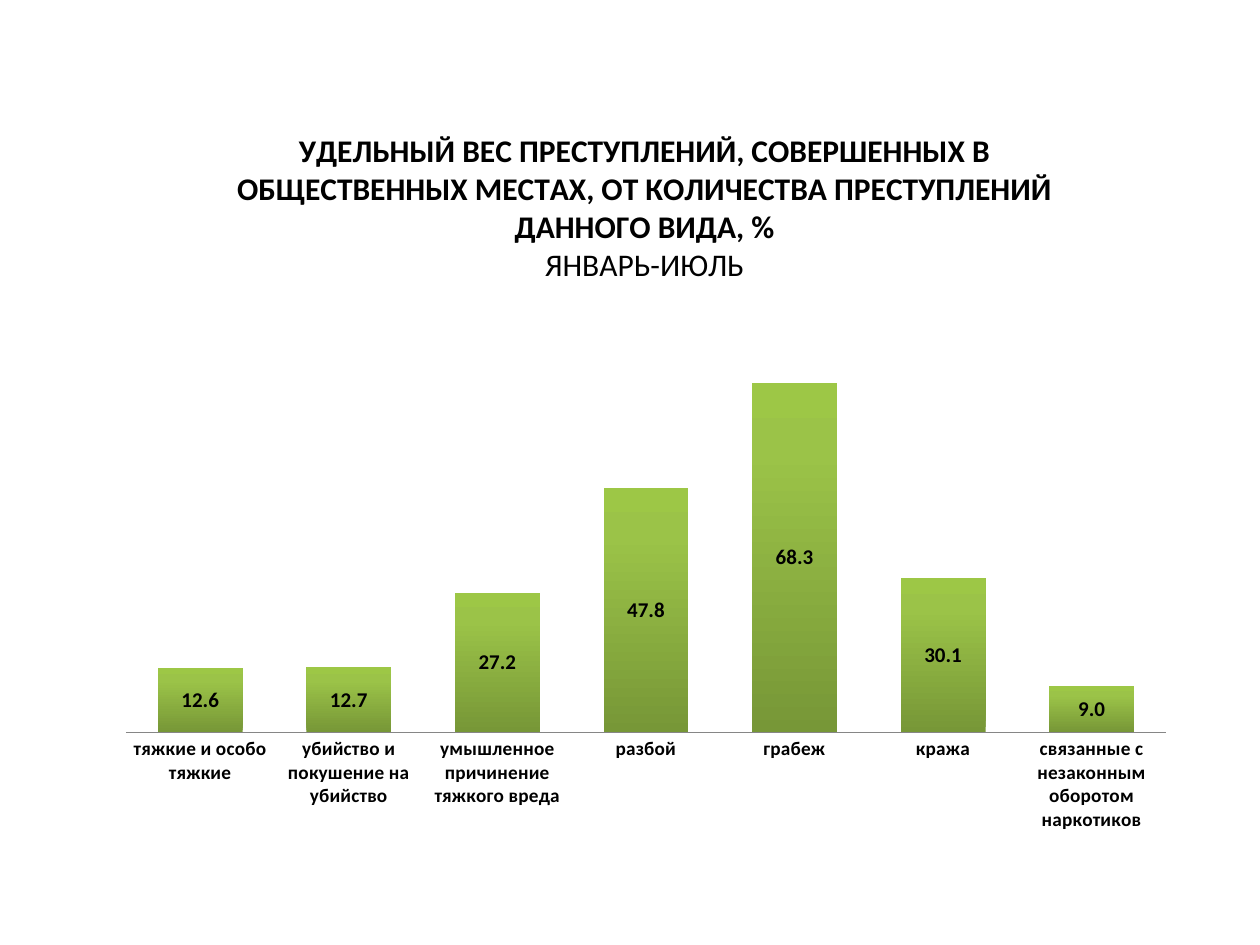
from copy import deepcopy
from typing import Any, NamedTuple

from lxml.etree import SubElement
from pptx import Presentation
from pptx.chart.chart import Chart
from pptx.chart.data import CategoryChartData
from pptx.dml.color import RGBColor
from pptx.dml.fill import FillFormat
from pptx.enum.chart import XL_CHART_TYPE, XL_LABEL_POSITION, XL_TICK_MARK
from pptx.oxml.ns import qn
from pptx.util import Inches, Pt


class CrimeShare(NamedTuple):
    crime: str
    percent: float


class TitleLine(NamedTuple):
    text: str
    bold: bool


class GradientStop(NamedTuple):
    position: float
    color: str


SHARES = [
    CrimeShare("тяжкие и особо тяжкие", 12.6),
    CrimeShare("убийство и покушение на убийство", 12.7),
    CrimeShare("умышленное причинение тяжкого вреда", 27.2),
    CrimeShare("разбой", 47.8),
    CrimeShare("грабеж", 68.3),
    CrimeShare("кража", 30.1),
    CrimeShare("связанные с незаконным оборотом наркотиков", 9.0),
]
TITLE_LINES = [
    TitleLine("УДЕЛЬНЫЙ ВЕС ПРЕСТУПЛЕНИЙ, СОВЕРШЕННЫХ В ОБЩЕСТВЕННЫХ МЕСТАХ, "
              "ОТ КОЛИЧЕСТВА ПРЕСТУПЛЕНИЙ ДАННОГО ВИДА, %", True),
    TitleLine("ЯНВАРЬ-ИЮЛЬ", False),
]
COLUMN_STOPS = [
    GradientStop(0, "779737"),
    GradientStop(0.8, "9BC348"),
    GradientStop(1, "9DC746"),
]
FONT = "Calibri"
BLACK = "000000"
AXIS_GRAY = "868686"


def rgb(color: str) -> RGBColor:
    return RGBColor.from_string(color)


def set_values(target: Any, values: dict[str, Any]) -> None:
    for name, value in values.items():
        setattr(target, name, value)


def format_font(font: Any, size: float, bold: bool) -> None:
    set_values(font, {"name": FONT, "size": Pt(size), "bold": bold})
    font.color.rgb = rgb(BLACK)


def place(element: Any, **values: Any) -> None:
    """Give a chart title or plot area a manual layout, in fractions of the chart."""
    layout = element.find(qn("c:layout"))
    if layout is None:
        layout = SubElement(element, qn("c:layout"))
        after = element.find(qn("c:tx"))
        if after is None:
            element.insert(0, layout)
        else:
            after.addnext(layout)
    manual = SubElement(layout, qn("c:manualLayout"))
    for name, value in values.items():
        SubElement(manual, qn(f"c:{name}")).set("val", str(value))


def fill_gradient(fill: FillFormat, stops: list[GradientStop]) -> None:
    fill.gradient()
    fill.gradient_angle = 90
    first = fill.gradient_stops[0]
    stop_list = fill._fill._gradFill.gsLst
    while len(stop_list) < len(stops):
        stop_list.append(deepcopy(stop_list[0]))
    for target, stop in zip(fill.gradient_stops, stops):
        target.color.rgb = rgb(stop.color)
        target.position = stop.position


def add_title(chart: Chart, lines: list[TitleLine]) -> None:
    title = chart.chart_title
    frame = title.text_frame
    for index, line in enumerate(lines):
        para = frame.add_paragraph() if index else frame.paragraphs[0]
        span = para.add_run()
        span.text = line.text
        format_font(span.font, 18, line.bold)
    title.include_in_layout = False
    place(title._element, xMode="edge", yMode="edge", x=0.12, y=0.04)


def format_axes(chart: Chart) -> None:
    crimes = chart.category_axis
    set_values(crimes, {"major_tick_mark": XL_TICK_MARK.NONE,
                        "minor_tick_mark": XL_TICK_MARK.NONE,
                        "has_major_gridlines": False})
    format_font(crimes.tick_labels.font, 11, True)
    crimes.format.line.color.rgb = rgb(AXIS_GRAY)
    crimes.format.line.width = Pt(0.75)
    set_values(chart.value_axis, {"minimum_scale": 0, "maximum_scale": 80,
                                  "has_major_gridlines": False, "visible": False})


def format_columns(chart: Chart) -> None:
    plot = chart.plots[0]
    set_values(plot, {"gap_width": 75, "overlap": 100,
                      "vary_by_categories": False, "has_data_labels": True})
    labels = plot.data_labels
    set_values(labels, {"show_value": True, "number_format": "0.0",
                        "number_format_is_linked": False,
                        "position": XL_LABEL_POSITION.CENTER})
    format_font(labels.font, 12, True)
    fill_gradient(plot.series[0].format.fill, COLUMN_STOPS)


def add_share_chart(page: Any, shares: list[CrimeShare]) -> None:
    data = CategoryChartData(number_format="0.0")
    data.categories = [share.crime for share in shares]
    data.add_series("Series 1", [share.percent for share in shares])
    chart = page.shapes.add_chart(
        XL_CHART_TYPE.COLUMN_STACKED,
        Inches(0.83), Inches(0.76), Inches(8.51), Inches(5.91), data,
    ).chart
    chart.has_legend = False
    format_font(chart.font, 18, False)
    add_title(chart, TITLE_LINES)
    format_axes(chart)
    format_columns(chart)
    plot_area = chart._chartSpace.chart.plotArea
    place(plot_area, layoutTarget="inner", xMode="edge", yMode="edge",
          x=0.02, y=0.305, w=0.97, h=0.55)


def main() -> None:
    deck = Presentation()
    set_values(deck, {"slide_width": Inches(10), "slide_height": Inches(7.5)})
    page = deck.slides.add_slide(deck.slide_layouts[6])
    add_share_chart(page, SHARES)
    deck.save("out.pptx")


if __name__ == "__main__":
    main()
